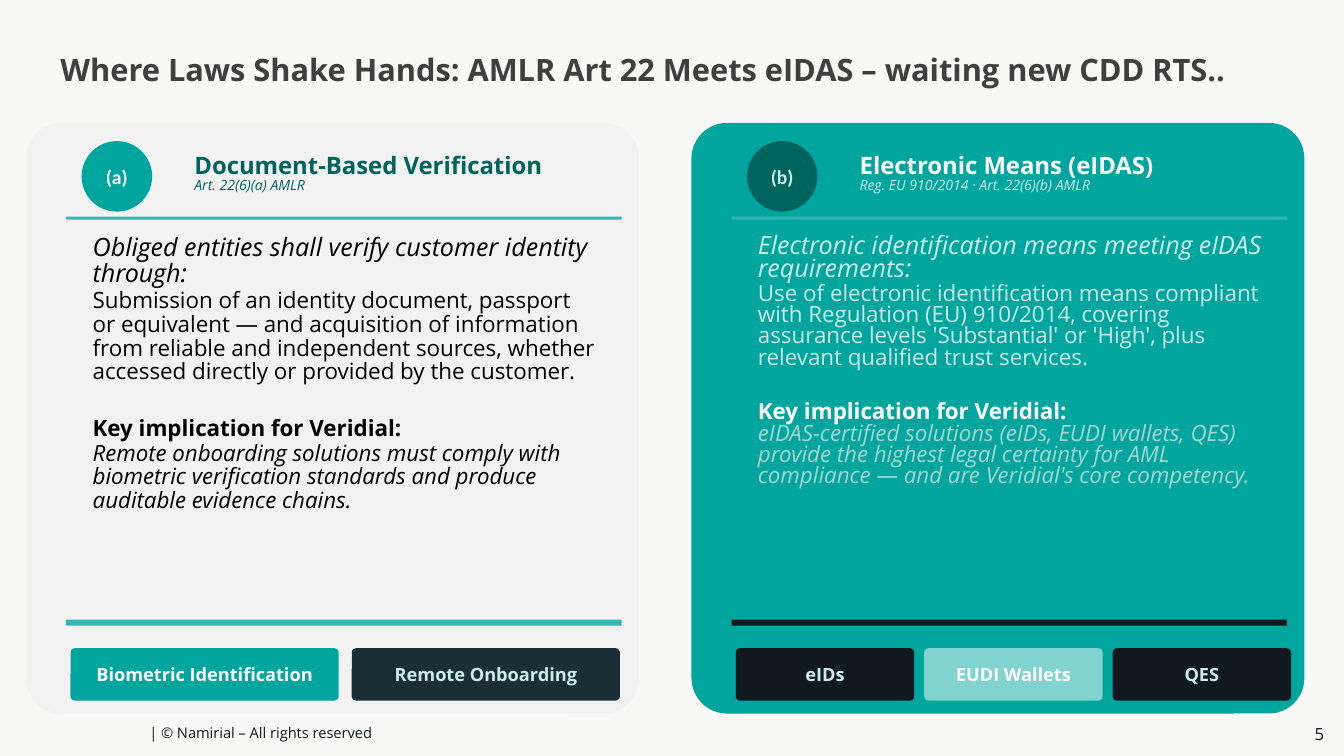
import pptx
import pptx.util
import pptx.dml.color
import pptx.enum.shapes
import pptx.enum.text

Pt = pptx.util.Pt
Kind = pptx.enum.shapes.MSO_SHAPE
Align = pptx.enum.text.PP_ALIGN
Anchor = pptx.enum.text.MSO_ANCHOR

hues = {
    "page": "F8F8F7", "title": "403F40", "ink": "111820", "black": "000000",
    "white": "FFFFFF", "gray": "F2F2F2", "teal": "00A69D", "deep": "00645E",
    "line": "33B8B1", "navy": "1A2E38", "mint": "CCEDEB", "pale": "D0EAE8",
    "sage": "A8D5D0", "aqua": "80D3CE",
}


def draw(kind, box, hue, curve=None):
    shape = slide.shapes.add_shape(kind, *[Pt(n) for n in box])
    shape.shadow.inherit = False
    shape.fill.solid()
    shape.fill.fore_color.rgb = pptx.dml.color.RGBColor.from_string(hues[hue])
    shape.line.fill.background()
    if curve:
        shape.adjustments[0] = curve
    return shape


def write(shape, rows, side=0, edge=0, align=Align.LEFT, anchor=Anchor.MIDDLE,
          space=None, face="Open Sans"):
    frame = shape.text_frame
    frame.word_wrap = True
    frame.auto_size = pptx.enum.text.MSO_AUTO_SIZE.NONE
    frame.vertical_anchor = anchor
    frame.margin_left = frame.margin_right = Pt(side)
    frame.margin_top = frame.margin_bottom = Pt(edge)
    for i, (text, size, hue, style, before, after) in enumerate(rows):
        para = frame.add_paragraph() if i else frame.paragraphs[0]
        para.alignment = align
        para.space_before = Pt(before)
        para.space_after = Pt(after)
        if space:
            para.line_spacing = space
        run = para.add_run()
        run.text = text
        run.font.name = face
        run.font.size = Pt(size)
        run.font.bold = "b" in style
        run.font.italic = "i" in style
        run.font.color.rgb = pptx.dml.color.RGBColor.from_string(hues[hue])


deck = pptx.Presentation()
deck.slide_width = Pt(960)
deck.slide_height = Pt(540)
slide = deck.slides.add_slide(deck.slide_layouts[5])
slide.background.fill.solid()
slide.background.fill.fore_color.rgb = pptx.dml.color.RGBColor.from_string(hues["page"])

title = slide.shapes.title
title.left, title.top, title.width, title.height = Pt(36), Pt(32.4), Pt(880), Pt(34.6)
write(title, [("Where Laws Shake Hands: AMLR Art 22 Meets eIDAS – waiting new CDD RTS..",
               22, "title", "b", 0, 0)], side=7.2, edge=3.6)

panels = [
    {
        "fill": "gray", "disc": "teal", "bar": "line", "space": 0.88,
        "mark": ("(a)", "white"),
        "head": [("Document-Based Verification", "deep"), ("Art. 22(6)(a) AMLR", "deep")],
        "body": [
            ("Obliged entities shall verify customer identity through:", "black"),
            ("Submission of an identity document, passport or equivalent — and acquisition "
             "of information from reliable and independent sources, whether accessed "
             "directly or provided by the customer.", "black"),
            ("Key implication for Veridial:", "black"),
            ("Remote onboarding solutions must comply with biometric verification "
             "standards and produce auditable evidence chains.", "black"),
        ],
        "wide": 191.5, "gap": 9.4,
        "tags": [("Biometric Identification", "teal", "white"),
                 ("Remote Onboarding", "navy", "mint")],
    },
    {
        "fill": "teal", "disc": "deep", "bar": "ink", "space": 0.79,
        "mark": ("(b)", "mint"),
        "head": [("Electronic Means (eIDAS)", "white"),
                 ("Reg. EU 910/2014 · Art. 22(6)(b) AMLR", "mint")],
        "body": [
            ("Electronic identification means meeting eIDAS requirements:", "mint"),
            ("Use of electronic identification means compliant with Regulation (EU) "
             "910/2014, covering assurance levels 'Substantial' or 'High', plus relevant "
             "qualified trust services.", "pale"),
            ("Key implication for Veridial:", "white"),
            ("eIDAS-certified solutions (eIDs, EUDI wallets, QES) provide the highest "
             "legal certainty for AML compliance — and are Veridial's core competency.",
             "sage"),
        ],
        "wide": 127.4, "gap": 7.2,
        "tags": [("eIDs", "ink", "mint"), ("EUDI Wallets", "aqua", "white"),
                 ("QES", "ink", "mint")],
    },
]
heads = [(17.1, "b", 0, 0), (10.1, "i", 0.6, 0)]
forms = [(18, "i", 0, 1.2), (16, "", 0, 2), (16, "b", 21.5, 0.8), (16, "i", 0, 0)]

for col, panel in enumerate(panels):
    left = 18.7 + col * 475.2
    draw(Kind.ROUNDED_RECTANGLE, (left, 87.8, 437.8, 421.9), panel["fill"], 0.06)

    disc = draw(Kind.OVAL, (left + 39.6, 100.8, 50.4, 50.4), panel["disc"])
    text, hue = panel["mark"]
    write(disc, [(text, 14, hue, "b", 0, 0)], align=Align.CENTER, face="Calibri")

    head = slide.shapes.add_textbox(Pt(left + 105.8), Pt(103.7), Pt(316), Pt(42.5))
    write(head, [(text, size, hue, style, before, after)
                 for (text, hue), (size, style, before, after) in zip(panel["head"], heads)],
          side=14.4, edge=7.2, space=0.8)

    draw(Kind.RECTANGLE, (left + 28.6, 154.8, 396.7, 2.2), "line")

    body = slide.shapes.add_textbox(Pt(left + 33.1), Pt(160.6), Pt(390.2), Pt(236.2))
    write(body, [(text, size, hue, style, before, after)
                 for (text, hue), (size, style, before, after) in zip(panel["body"], forms)],
          side=14.4, edge=7.2, anchor=Anchor.TOP, space=panel["space"])

    draw(Kind.RECTANGLE, (left + 28.6, 442.6, 396.7, 4.3), panel["bar"])

    for i, (text, fill, hue) in enumerate(panel["tags"]):
        spot = left + 31.7 + i * (panel["wide"] + panel["gap"])
        tag = draw(Kind.ROUNDED_RECTANGLE, (spot, 463, panel["wide"], 37.4), fill, 0.08)
        write(tag, [(text, 13, hue, "b", 0, 0)], side=9.4, edge=5, align=Align.CENTER)

foot = slide.shapes.add_textbox(Pt(106.6), Pt(516.2), Pt(480), Pt(14.4))
write(foot, [("| © Namirial – All rights reserved", 10.5, "ink", "", 0, 0)])
page = slide.shapes.add_textbox(Pt(890.6), Pt(514.8), Pt(55.4), Pt(18.7))
write(page, [("5", 12, "ink", "", 0, 0)], align=Align.RIGHT)

deck.save("out.pptx")
